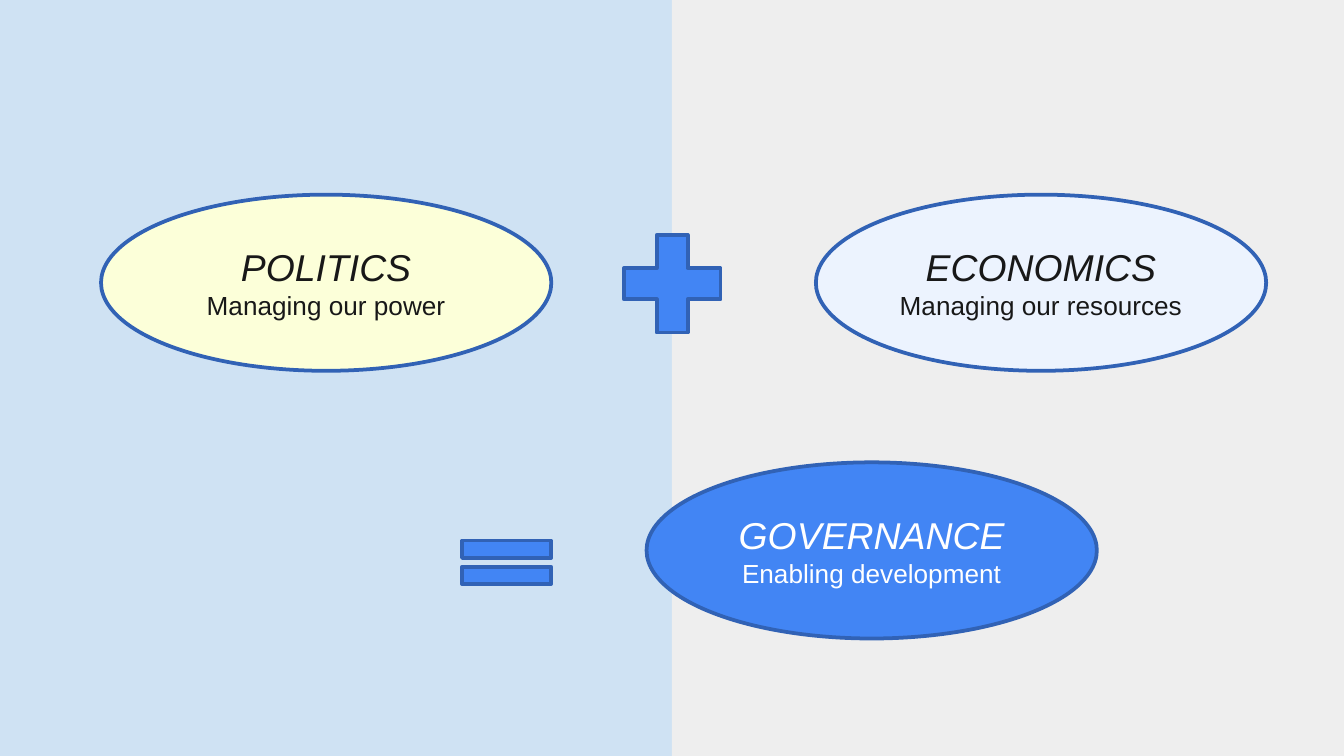
from dataclasses import dataclass

from pptx import Presentation
from pptx.dml.color import RGBColor as Rgb
from pptx.enum.shapes import MSO_SHAPE as Kind
from pptx.enum.text import MSO_ANCHOR as Anchor, PP_ALIGN as Align
from pptx.util import Cm, Pt


@dataclass(frozen=True)
class Theme:
    font: str = "Arial"
    head: int = 20
    body: int = 14
    edge: float = 2
    sky: str = "CFE2F3"
    grey: str = "EEEEEE"
    blue: str = "4285F4"
    navy: str = "3162B5"
    cream: str = "FCFFD9"
    pale: str = "ECF3FE"
    ink: str = "181818"
    white: str = "FFFFFF"


THEME = Theme()
WIDE, HIGH = 25.4, 14.29
OVAL = (8.51, 3.33)
ROW = 3.68  # top of the upper pair of ovals


def add_form(slide, kind, box, fill, line=None):
    """Add a flat preset shape; box is left, top, width, height in cm."""
    form = slide.shapes.add_shape(kind, *map(Cm, box))
    form.shadow.inherit = False
    form.fill.solid()
    form.fill.fore_color.rgb = Rgb.from_string(fill)
    if line:
        form.line.color.rgb = Rgb.from_string(line)
        form.line.width = Pt(THEME.edge)
    else:
        form.line.fill.background()
    return form


def add_sign(slide, kind, box):
    """Add a plus or equals sign."""
    add_form(slide, kind, box, THEME.blue, THEME.navy)


def add_oval(slide, left, top, fill, ink, head, body):
    """Add an oval with an italic heading over a plain line."""
    form = add_form(slide, Kind.OVAL, (left, top, *OVAL), fill, THEME.navy)
    frame = form.text_frame
    frame.word_wrap = True
    frame.vertical_anchor = Anchor.MIDDLE
    frame.text = f"{head}\n{body}"
    sizes = (THEME.head, THEME.body)
    for para, size in zip(frame.paragraphs, sizes):
        para.alignment = Align.CENTER
        font = para.runs[0].font
        font.name = THEME.font
        font.size = Pt(size)
        font.italic = size == THEME.head
        font.color.rgb = Rgb.from_string(ink)


def main():
    deck = Presentation()
    deck.slide_width, deck.slide_height = Cm(WIDE), Cm(HIGH)
    slide = deck.slides.add_slide(deck.slide_layouts[6])

    # Two-tone background
    back = slide.background.fill
    back.solid()
    back.fore_color.rgb = Rgb.from_string(THEME.sky)
    half = WIDE / 2
    add_form(slide, Kind.RECTANGLE, (half, 0, half, HIGH), THEME.grey)

    # Signs of the sum
    add_sign(slide, Kind.MATH_PLUS, (11.46, 4.11, 2.49, 2.51))
    add_sign(slide, Kind.MATH_EQUAL, (8.43, 9.93, 2.29, 1.4))

    # Terms and result
    add_oval(slide, 1.91, ROW, THEME.cream, THEME.ink,
             "POLITICS", "Managing our power")
    add_oval(slide, 15.42, ROW, THEME.pale, THEME.ink,
             "ECONOMICS", "Managing our resources")
    add_oval(slide, 12.22, 8.74, THEME.blue, THEME.white,
             "GOVERNANCE", "Enabling development")

    deck.save("out.pptx")


if __name__ == "__main__":
    main()
